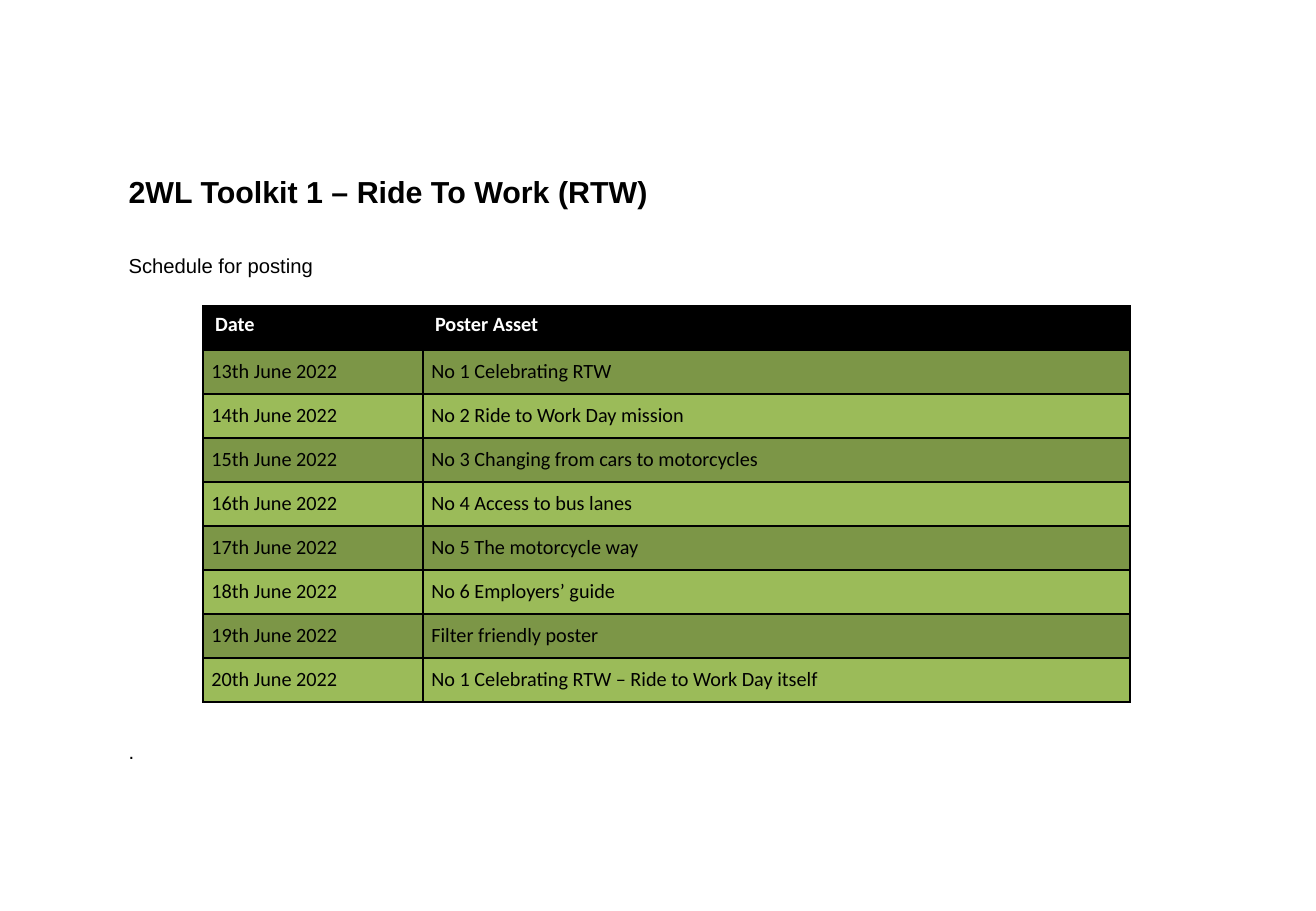
from lxml import etree
from pptx import Presentation
from pptx.dml.color import RGBColor
from pptx.enum.text import MSO_ANCHOR
from pptx.oxml.ns import qn
from pptx.util import Inches, Pt

MIDDLE = MSO_ANCHOR.MIDDLE
BLACK, WHITE = "000000", "FFFFFF"
BANDS = ["7C9647", "9BBB59"]

# Text, size, bold, space before
LINES = [
    ("2WL Toolkit 1 – Ride To Work (RTW)", 18, True, 0),
    ("Schedule for posting", 12, False, 25.5),
    (".", 12, False, 274),
]
ASSETS = [
    "No 1 Celebrating RTW",
    "No 2 Ride to Work Day mission",
    "No 3 Changing from cars to motorcycles",
    "No 4 Access to bus lanes",
    "No 5 The motorcycle way",
    "No 6 Employers’ guide",
    "Filter friendly poster",
    "No 1 Celebrating RTW – Ride to Work Day itself",
]
ROWS = [("Date", "Poster Asset")] + [
    (f"{day}th June 2022", asset) for day, asset in enumerate(ASSETS, 13)]
INSETS = {"margin_left": Inches(0.07), "margin_right": Inches(0.07),
          "margin_top": 0, "margin_bottom": 0, "vertical_anchor": MIDDLE}


def paint(target, color):
    target.rgb = RGBColor.from_string(color)


def style(font, color, **values):
    for key, value in values.items():
        setattr(font, key, value)
    paint(font.color, color)


def border(cell, color, width):
    props = cell._tc.get_or_add_tcPr()
    for place, side in enumerate(("a:lnL", "a:lnR", "a:lnT", "a:lnB")):
        line = etree.Element(qn(side), w=str(Pt(width)))
        fill = etree.SubElement(line, qn("a:solidFill"))
        etree.SubElement(fill, qn("a:srgbClr"), val=color)
        props.insert(place, line)


def add_copy(slide, left, top, width, height):
    """Title, subtitle and closing line in one box."""
    box = slide.shapes.add_textbox(*map(Inches, (left, top, width, height)))
    frame = box.text_frame
    frame.word_wrap = True
    for index, (text, size, bold, gap) in enumerate(LINES):
        para = frame.add_paragraph() if index else frame.paragraphs[0]
        para.space_before = Pt(gap)
        run = para.add_run()
        run.text = text
        style(run.font, BLACK, name="Arial", size=Pt(size), bold=bold)


def add_plan(slide, left, top, width, height):
    """Posting schedule with a header and banded rows."""
    frame = slide.shapes.add_table(
        len(ROWS), 2, *map(Inches, (left, top, width, height)))
    table = frame.table
    first = 1.81
    for column, size in zip(table.columns, (first, width - first)):
        column.width = Inches(size)
    for r, row in enumerate(ROWS):
        for c, text in enumerate(row):
            cell = table.cell(r, c)
            cell.text = text
            if r:
                for key, value in INSETS.items():
                    setattr(cell, key, value)
            cell.fill.solid()
            paint(cell.fill.fore_color, BANDS[(r - 1) % 2] if r else BLACK)
            border(cell, BLACK, 1)
            font = cell.text_frame.paragraphs[0].runs[0].font
            style(font, BLACK if r else WHITE,
                  name="Calibri", size=Pt(12), bold=r == 0)


def main():
    deck = Presentation()
    deck.slide_width, deck.slide_height = Inches(10.83), Inches(7.5)
    slide = deck.slides.add_slide(deck.slide_layouts[6])
    add_copy(slide, 0.96, 1.38, 9.17, 4.98)
    add_plan(slide, 1.67, 2.52, 7.63, 3.26)
    deck.save("out.pptx")


if __name__ == "__main__":
    main()
